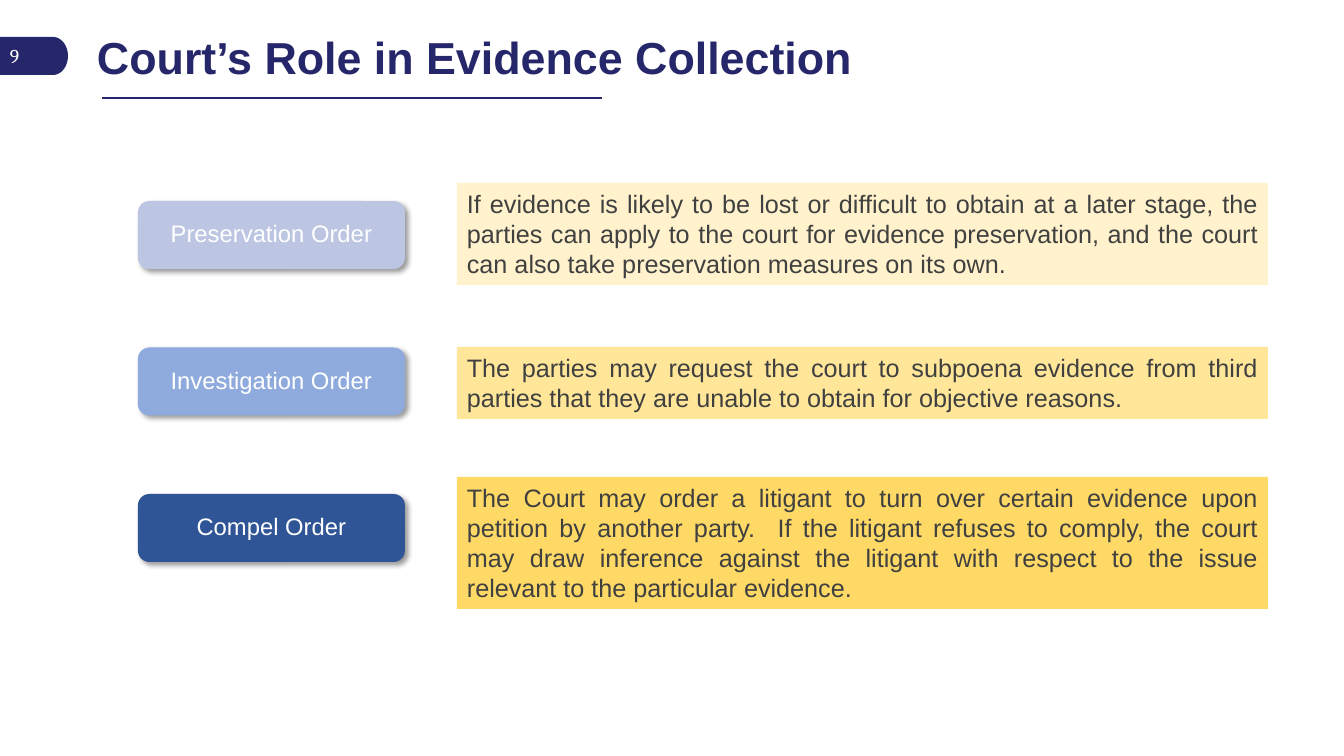
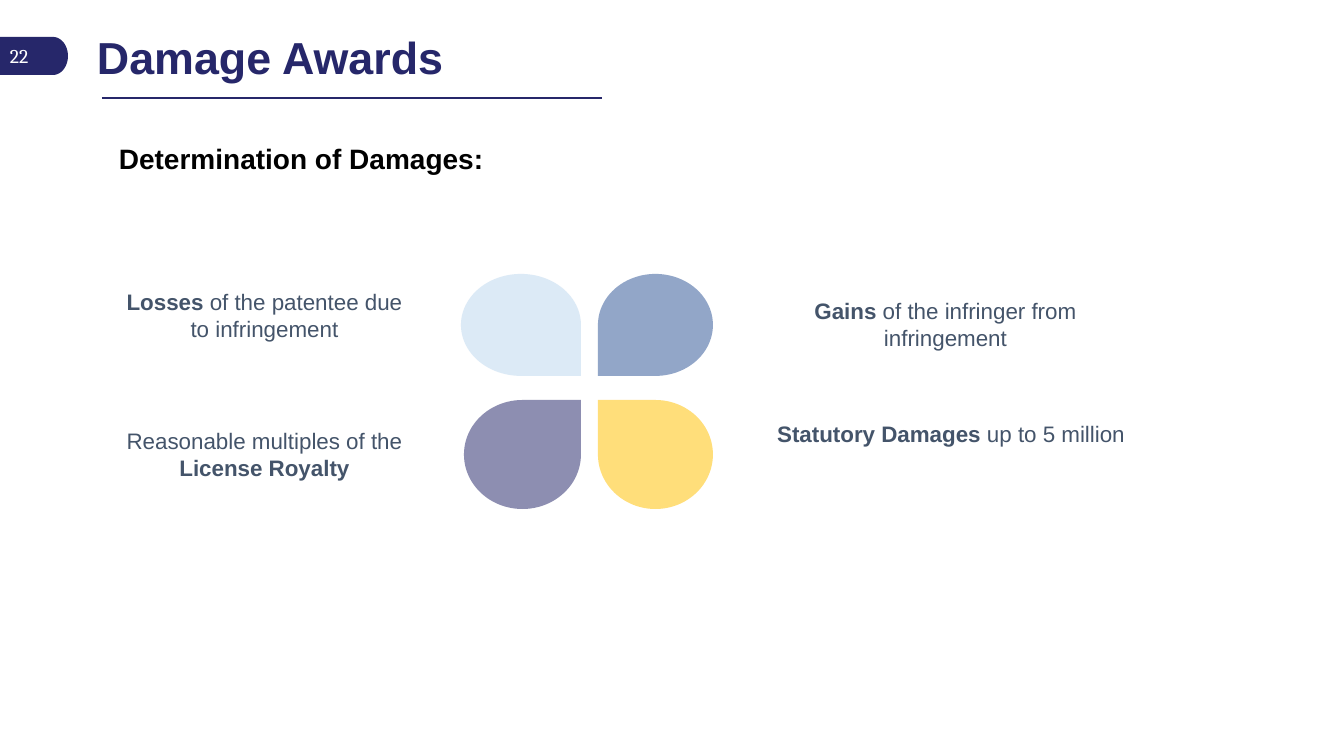
from math import cos, pi, sin

from lxml.etree import SubElement
from pptx import Presentation
from pptx.dml.color import RGBColor
from pptx.enum.shapes import MSO_CONNECTOR, MSO_SHAPE
from pptx.enum.text import MSO_ANCHOR, MSO_AUTO_SIZE, PP_ALIGN
from pptx.oxml.ns import qn
from pptx.util import Pt

EMU_PER_PX = 914400 / 100.8
COLORS = {
    "navy": "26276A", "white": "FFFFFF", "black": "000000",
    "body": "404040", "note": "44546A",
    "periwinkle": "BCC6E2", "sky": "8FAADC", "blue": "2F5597",
    "cream": "FFF2CC", "butter": "FFE699", "gold": "FFD966",
    "pale": "BDD7EE", "amber": "FFC000",
}
ORDERS = [
    ("Preservation Order", "periwinkle", "cream", 183, 3,
     "If evidence is likely to be lost or difficult to obtain at a later stage, "
     "the parties can apply to the court for evidence preservation, and the court "
     "can also take preservation measures on its own."),
    ("Investigation Order", "sky", "butter", 347, 2,
     "The parties may request the court to subpoena evidence from third parties "
     "that they are unable to obtain for objective reasons."),
    ("Compel Order", "blue", "gold", 477, 4,
     "The Court may order a litigant to turn over certain evidence upon petition "
     "by another party.  If the litigant refuses to comply, the court may draw "
     "inference against the litigant with respect to the issue relevant to the "
     "particular evidence."),
]
PETALS = [
    ((0, 0, 120, 102), "pale", ("flipV",)),
    ((137, 0, 115, 102), "blue", ("flipH", "flipV")),
    ((3, 126, 117, 109), "navy", ()),
    ((137, 126, 115, 109), "amber", ("flipH",)),
]
NOTES = [
    ((106, 283, 317, 65), [("Losses", True), (" of the patentee due to infringement", False)]),
    ((105, 422, 319, 65), [("Reasonable multiples of the ", False), ("License Royalty", True)]),
    ((767, 292, 357, 65), [("Gains", True), (" of the infringer from infringement", False)]),
    ((766, 415, 370, 65), [("Statutory Damages ", True), ("up to 5 million", False)]),
]


def px(value):
    return round(value * EMU_PER_PX)


def emu_box(box):
    return [px(value) for value in box]


def rgb(name):
    return RGBColor.from_string(COLORS[name])


def style(paragraph, size, color, bold=None, align=PP_ALIGN.LEFT, font="Arial", indent=0):
    if indent:
        pPr = paragraph._p.get_or_add_pPr()
        pPr.set("marL", str(px(indent)))
        pPr.set("indent", "0")
    paragraph.alignment = align
    paragraph.font.name = font
    paragraph.font.size = Pt(size)
    paragraph.font.color.rgb = rgb(color)
    if bold is not None:
        paragraph.font.bold = bold


def paint(shape, color):
    shape.shadow.inherit = False
    shape.fill.solid()
    shape.fill.fore_color.rgb = rgb(color)
    shape.line.fill.background()


def add_panel(slide, preset, box, color):
    panel = slide.shapes.add_shape(preset, *emu_box(box))
    paint(panel, color)
    return panel


def add_text(slide, box):
    frame = slide.shapes.add_textbox(*emu_box(box)).text_frame
    frame.word_wrap = True
    return frame


def cast_shadow(shape):
    effects = shape._element.spPr.find(qn("a:effectLst"))
    shadow = SubElement(effects, qn("a:outerShdw"), blurRad=str(Pt(4)),
                        dist=str(Pt(3)), dir="2700000", algn="tl", rotWithShape="0")
    tint = SubElement(shadow, qn("a:srgbClr"), val=COLORS["black"])
    SubElement(tint, qn("a:alpha"), val="40000")


def add_page_tab(slide, number, box):
    left, top, width, height = box
    radius, cap = height / 2, 15
    center_x, center_y = left + width - cap, top + radius
    angles = [pi * step / 40 - pi / 2 for step in range(41)]
    outline = [(px(center_x + cap * cos(a)), px(center_y + radius * sin(a))) for a in angles]
    builder = slide.shapes.build_freeform(px(left), px(top))
    builder.add_line_segments(outline + [(px(left), px(top + height))], close=True)
    tab = builder.convert_to_shape()
    paint(tab, "navy")
    frame = tab.text_frame
    frame.vertical_anchor = MSO_ANCHOR.MIDDLE
    frame.text = number
    style(frame.paragraphs[0], 14, "white", font="Cambria")


def add_title_slide(deck, number, heading):
    slide = deck.slides.add_slide(deck.slide_layouts[5])
    add_page_tab(slide, number, (0, 37, 68, 38))
    rule = slide.shapes.add_connector(MSO_CONNECTOR.STRAIGHT, px(102), px(98), px(602), px(98))
    rule.line.color.rgb = rgb("navy")
    rule.line.width = Pt(1.5)
    SubElement(rule._element.spPr, qn("a:effectLst"))
    title = slide.shapes.title
    title.left, title.top, title.width, title.height = emu_box((62, 26, 1281, 67))
    frame = title.text_frame
    frame.text = heading
    frame.auto_size = MSO_AUTO_SIZE.NONE
    frame.vertical_anchor = MSO_ANCHOR.MIDDLE
    frame.margin_left = frame.margin_right = px(9)
    frame.margin_top = frame.margin_bottom = px(4)
    style(frame.paragraphs[0], 32, "navy", bold=True, indent=26)
    frame.paragraphs[0].line_spacing = 0.9
    return slide


def add_order_label(slide, box, name, color):
    label = add_panel(slide, MSO_SHAPE.ROUNDED_RECTANGLE, box, color)
    cast_shadow(label)
    frame = label.text_frame
    frame.word_wrap = True
    frame.vertical_anchor = MSO_ANCHOR.MIDDLE
    frame.text = name
    style(frame.paragraphs[0], 17, "white", align=PP_ALIGN.CENTER)
    frame.paragraphs[0].line_spacing = 0.9


def add_order_text(slide, box, description, color):
    frame = add_panel(slide, MSO_SHAPE.RECTANGLE, box, color).text_frame
    frame.word_wrap = True
    frame.vertical_anchor = MSO_ANCHOR.TOP
    frame.text = description
    style(frame.paragraphs[0], 18, "body", align=PP_ALIGN.JUSTIFY)


def add_petals(slide, left, top):
    for (x, y, width, height), color, flips in PETALS:
        petal = add_panel(slide, MSO_SHAPE.TEAR, (left + x, top + y, width, height), color)
        for flip in flips:
            petal._element.spPr.find(qn("a:xfrm")).set(flip, "1")
        tint = petal._element.spPr.find(qn("a:solidFill")).find(qn("a:srgbClr"))
        SubElement(tint, qn("a:alpha"), val="52000")


def add_note(slide, box, parts):
    paragraph = add_text(slide, box).paragraphs[0]
    style(paragraph, 16, "note", align=PP_ALIGN.CENTER)
    for words, bold in parts:
        run = paragraph.add_run()
        run.text = words
        run.font.bold = bold


def build_court_role(deck):
    slide = add_title_slide(deck, "9", "Court’s Role in Evidence Collection")
    for row, (name, label_color, text_color, top, lines, description) in enumerate(ORDERS):
        add_order_label(slide, (138, 201 + row * 146.5, 267, 68), name, label_color)
        add_order_text(slide, (457, top, 811, 12 + 30 * lines), description, text_color)


def build_damage_awards(deck):
    slide = add_title_slide(deck, "22", "Damage Awards")
    frame = add_text(slide, (97, 137, 1203, 44))
    frame.text = "Determination of Damages:"
    subheading = frame.paragraphs[0]
    style(subheading, 20, "black", bold=True, indent=12)
    subheading.line_spacing = Pt(24)
    subheading.space_after = Pt(12)
    add_petals(slide, 461, 274)
    for box, parts in NOTES:
        add_note(slide, box, parts)


def main():
    deck = Presentation()
    deck.slide_width, deck.slide_height = px(1344), px(756)
    build_court_role(deck)
    build_damage_awards(deck)
    deck.save("out.pptx")


if __name__ == "__main__":
    main()
